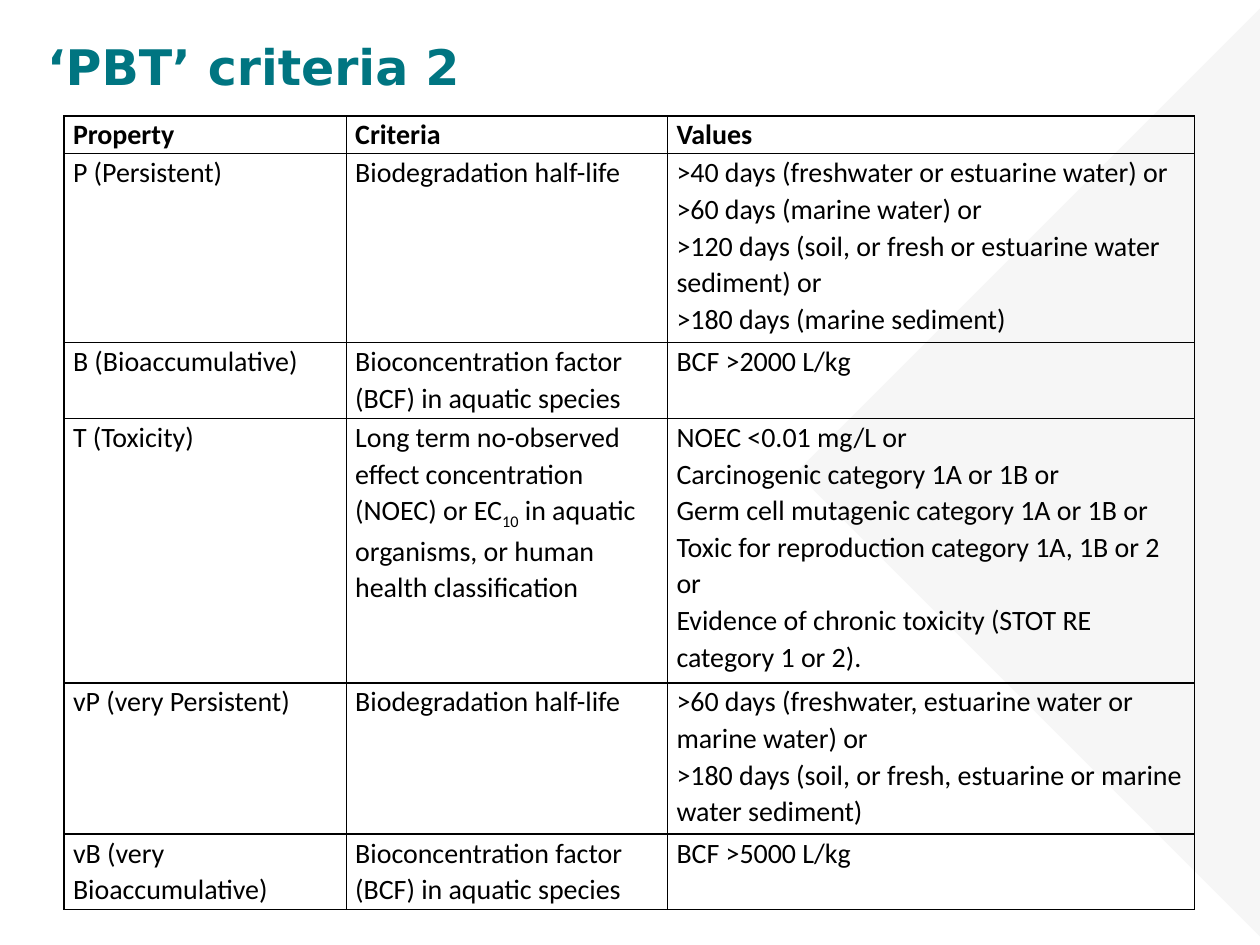
from dataclasses import dataclass

from lxml.etree import SubElement
from pptx import Presentation
from pptx.dml.color import RGBColor
from pptx.enum.shapes import MSO_SHAPE
from pptx.enum.text import MSO_ANCHOR, PP_ALIGN
from pptx.oxml import parse_xml
from pptx.oxml.ns import nsdecls, qn
from pptx.util import Inches, Pt


@dataclass(frozen=True)
class Theme:
    title_color: str = "007581"
    text_color: str = "000000"
    border_color: str = "000000"
    backdrop_color: str = "F3F3F3"
    backdrop_opacity: int = 70
    title_font: str = "DejaVu Sans"
    body_font: str = "Calibri"
    title_size: int = 28
    body_size: int = 16
    border_width: int = 1


THEME = Theme()
WIDTH, HEIGHT = 10, 7.5
LINE_HEIGHT = 0.3  # one line of table text
COLUMN_WIDTHS = (2.24, 2.55, 4.18)
SUBSCRIPT = -25000

HEADER = ("Property", "Criteria", "Values")
HALF_LIFE = "Biodegradation half-life"
BIOCONCENTRATION = "Bioconcentration factor (BCF) in aquatic species"
TOXICITY = [
    ("Long term no-observed effect concentration (NOEC) or EC", 0),
    ("10", SUBSCRIPT),
    (" in aquatic organisms, or human health classification", 0),
]

# Each row: height in text lines, then property, criteria and values
ROWS = [
    (1, *HEADER),
    (5, "P (Persistent)", HALF_LIFE,
     ">40 days (freshwater or estuarine water) or\n"
     ">60 days (marine water) or\n"
     ">120 days (soil, or fresh or estuarine water sediment) or\n"
     ">180 days (marine sediment)"),
    (2, "B (Bioaccumulative)", BIOCONCENTRATION, "BCF >2000 L/kg"),
    (7, "T (Toxicity)", TOXICITY,
     "NOEC <0.01 mg/L or\n"
     "Carcinogenic category 1A or 1B or\n"
     "Germ cell mutagenic category 1A or 1B or\n"
     "Toxic for reproduction category 1A, 1B or 2 or\n"
     "Evidence of chronic toxicity (STOT RE category 1 or 2)."),
    (4, "vP (very Persistent)", HALF_LIFE,
     ">60 days (freshwater, estuarine water or marine water) or\n"
     ">180 days (soil, or fresh, estuarine or marine water sediment)"),
    (2, "vB (very Bioaccumulative)", BIOCONCENTRATION, "BCF >5000 L/kg"),
]


def write_text(frame, text, *, size, font, color, bold=False,
               align=PP_ALIGN.LEFT, spacing=1.0):
    """Write lines of a string, or one line of (text, baseline) pieces."""
    if isinstance(text, str):
        lines = [[(line, 0)] for line in text.split("\n")]
    else:
        lines = [text]
    for index, pieces in enumerate(lines):
        paragraph = frame.add_paragraph() if index else frame.paragraphs[0]
        paragraph.alignment = align
        paragraph.line_spacing = spacing
        for piece, baseline in pieces:
            run = paragraph.add_run()
            run.text = piece
            run.font.size = Pt(size)
            run.font.name = font
            run.font.bold = bold
            run.font.color.rgb = RGBColor.from_string(color)
            if baseline:
                run.font._element.set("baseline", str(baseline))


def add_backdrop(slide):
    """Translucent triangle pointing left from the right edge."""
    side = 5.21
    triangle = slide.shapes.add_shape(
        MSO_SHAPE.RIGHT_TRIANGLE, Inches(WIDTH - side / 2),
        Inches(HEIGHT / 2 - side / 2), Inches(side), Inches(side))
    triangle.rotation = 45
    triangle.shadow.inherit = False
    triangle.line.fill.background()
    triangle.fill.solid()
    triangle.fill.fore_color.rgb = RGBColor.from_string(THEME.backdrop_color)
    color = triangle.fill._xPr.find(qn("a:solidFill"))[0]
    SubElement(color, qn("a:alpha"), val=str(THEME.backdrop_opacity * 1000))


def add_title(slide, text):
    box = slide.shapes.add_textbox(
        Inches(-1.06), Inches(-0.03), Inches(6.14), Inches(0.84))
    frame = box.text_frame
    frame.word_wrap = True
    frame.vertical_anchor = MSO_ANCHOR.BOTTOM
    write_text(frame, text, size=THEME.title_size, font=THEME.title_font,
               color=THEME.title_color, bold=True, align=PP_ALIGN.CENTER,
               spacing=0.9)


def set_borders(cell):
    properties = cell._tc.get_or_add_tcPr()
    for index, side in enumerate("LRTB"):
        properties.insert(index, parse_xml(
            f'<a:ln{side} {nsdecls("a")} w="{Pt(THEME.border_width)}">'
            f'<a:solidFill><a:srgbClr val="{THEME.border_color}"/></a:solidFill>'
            f'</a:ln{side}>'))


def fill_cell(cell, text, bold):
    cell.margin_left = cell.margin_right = Inches(0.07)
    cell.margin_top = cell.margin_bottom = 0
    cell.fill.background()
    set_borders(cell)
    write_text(cell.text_frame, text, size=THEME.body_size,
               font=THEME.body_font, color=THEME.text_color, bold=bold,
               spacing=1.07)


def add_criteria_table(slide):
    total_lines = sum(row[0] for row in ROWS)
    table = slide.shapes.add_table(
        len(ROWS), len(COLUMN_WIDTHS), Inches(0.51), Inches(0.92),
        Inches(sum(COLUMN_WIDTHS)), Inches(total_lines * LINE_HEIGHT)).table
    table.first_row = table.horz_banding = False
    for column, width in zip(table.columns, COLUMN_WIDTHS):
        column.width = Inches(width)
    for row_index, (lines, *texts) in enumerate(ROWS):
        table.rows[row_index].height = Inches(lines * LINE_HEIGHT)
        for column_index, text in enumerate(texts):
            fill_cell(table.cell(row_index, column_index), text,
                      bold=row_index == 0)


def main():
    presentation = Presentation()
    presentation.slide_width = Inches(WIDTH)
    presentation.slide_height = Inches(HEIGHT)
    slide = presentation.slides.add_slide(presentation.slide_layouts[6])
    add_backdrop(slide)
    add_criteria_table(slide)
    add_title(slide, "‘PBT’ criteria 2")
    presentation.save("out.pptx")


if __name__ == "__main__":
    main()
